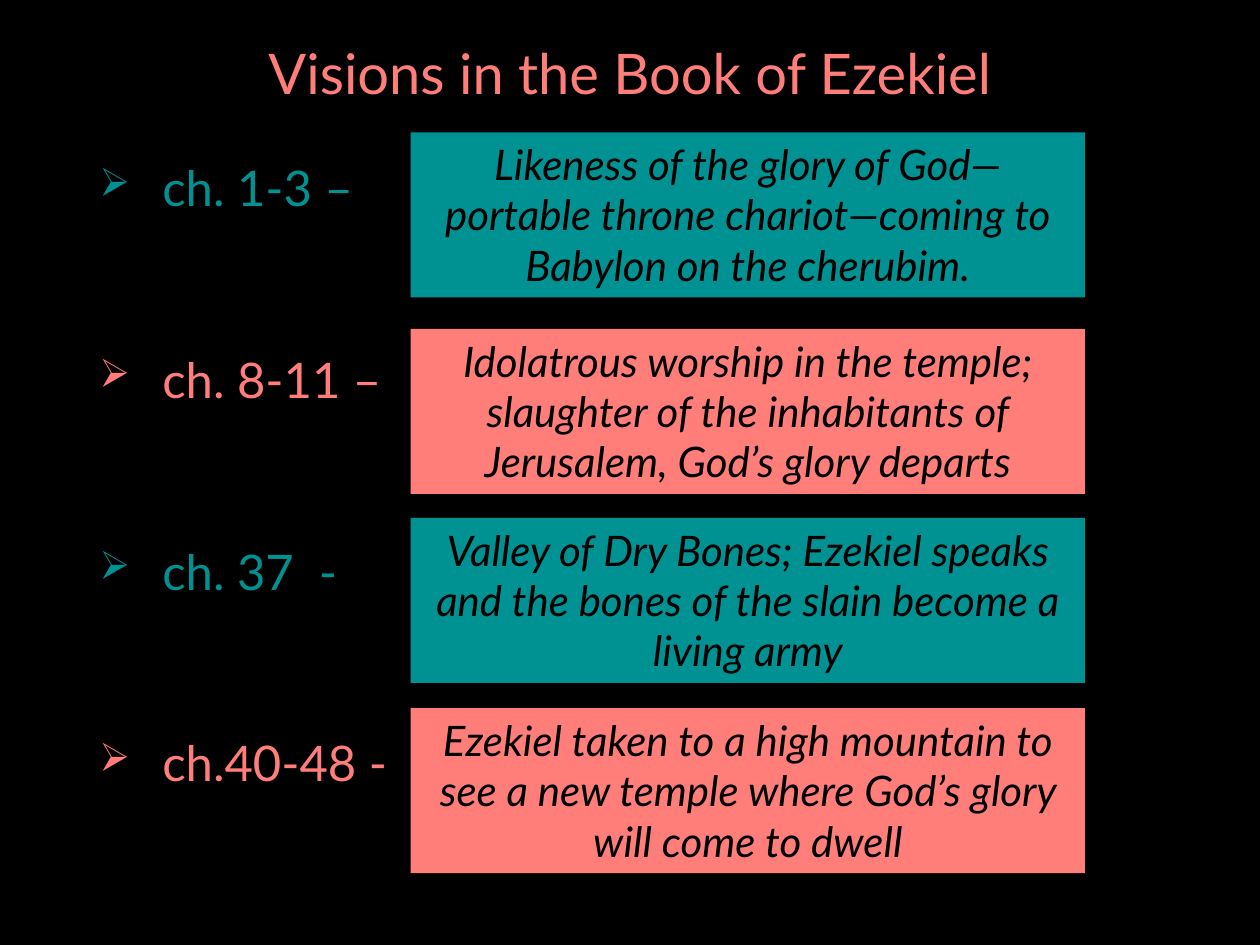
"""Build a slide that pairs chapters of Ezekiel with the visions they hold."""
import dataclasses

import lxml.etree
import pptx
import pptx.dml.color
import pptx.enum.shapes
import pptx.enum.text
import pptx.oxml.ns
import pptx.util


@dataclasses.dataclass(frozen=True)
class Theme:
    font: str = "Lato"
    black: str = "000000"
    teal: str = "009193"
    coral: str = "FF7E79"
    title_size: int = 32
    chapter_size: int = 28
    vision_size: int = 24


class SlideBuilder:
    COLUMNS, ROWS = 100, 75

    def __init__(self, presentation, theme):
        self.theme = theme
        self.column = presentation.slide_width / self.COLUMNS
        self.row = presentation.slide_height / self.ROWS
        self.slide = presentation.slides.add_slide(presentation.slide_layouts[6])
        background = self.slide.background.fill
        background.solid()
        background.fore_color.rgb = self.color(theme.black)

    @staticmethod
    def color(value):
        return pptx.dml.color.RGBColor.from_string(value)

    def place(self, left, top, width, height):
        return (round(left * self.column), round(top * self.row),
                round(width * self.column), round(height * self.row))

    def add_run(self, paragraph, text, size, color, italic=False):
        run = paragraph.add_run()
        run.text = text
        run.font.name = self.theme.font
        run.font.size = pptx.util.Pt(size)
        run.font.color.rgb = self.color(color)
        run.font.italic = italic

    def add_text_box(self, area):
        text_frame = self.slide.shapes.add_textbox(*self.place(*area)).text_frame
        text_frame.word_wrap = True
        return text_frame

    def add_title(self, text, area):
        text_frame = self.add_text_box(area)
        text_frame.vertical_anchor = pptx.enum.text.MSO_ANCHOR.MIDDLE
        paragraph = text_frame.paragraphs[0]
        paragraph.alignment = pptx.enum.text.PP_ALIGN.CENTER
        paragraph.line_spacing = 0.9
        self.add_run(paragraph, text, self.theme.title_size, self.theme.coral)

    def add_bullet(self, paragraph):
        properties = paragraph._p.get_or_add_pPr()
        indent = pptx.util.Inches(0.5)
        properties.set("marL", str(indent))
        properties.set("indent", str(-indent))
        for tag, name, value in (("a:buSzPct", "val", "80000"), ("a:buChar", "char", "➢")):
            lxml.etree.SubElement(properties, pptx.oxml.ns.qn(tag)).set(name, value)

    def add_chapters(self, chapters, area):
        text_frame = self.add_text_box(area)
        for index, (text, color) in enumerate(chapters):
            paragraph = text_frame.add_paragraph() if index else text_frame.paragraphs[0]
            paragraph.space_before = pptx.util.Pt(4)
            paragraph.space_after = pptx.util.Pt(72)
            self.add_bullet(paragraph)
            self.add_run(paragraph, text, self.theme.chapter_size, color)

    def add_vision(self, text, color, area):
        shape = self.slide.shapes.add_shape(
            pptx.enum.shapes.MSO_SHAPE.RECTANGLE, *self.place(*area))
        shape.shadow.inherit = False
        shape.fill.solid()
        shape.fill.fore_color.rgb = self.color(color)
        shape.line.fill.background()
        text_frame = shape.text_frame
        text_frame.word_wrap = True
        text_frame.auto_size = pptx.enum.text.MSO_AUTO_SIZE.SHAPE_TO_FIT_TEXT
        text_frame.vertical_anchor = pptx.enum.text.MSO_ANCHOR.TOP
        paragraph = text_frame.paragraphs[0]
        paragraph.alignment = pptx.enum.text.PP_ALIGN.CENTER
        self.add_run(paragraph, text, self.theme.vision_size, self.theme.black, italic=True)


def main():
    presentation = pptx.Presentation()
    presentation.slide_width = pptx.util.Inches(10)
    presentation.slide_height = pptx.util.Inches(7.5)
    theme = Theme()
    builder = SlideBuilder(presentation, theme)
    visions = [
        ("ch. 1-3 –", theme.teal, 10.5,
         "Likeness of the glory of God—portable throne chariot—coming to Babylon on the cherubim."),
        ("ch. 8-11 –", theme.coral, 26.1,
         "Idolatrous worship in the temple; slaughter of the inhabitants of Jerusalem, "
         "God’s glory departs"),
        ("ch. 37  -", theme.teal, 41.1,
         "Valley of Dry Bones; Ezekiel speaks and the bones of the slain become a living army"),
        ("ch.40-48 -", theme.coral, 56.2,
         "Ezekiel taken to a high mountain to see a new temple where God’s glory "
         "will come to dwell"),
    ]
    builder.add_title("Visions in the Book of Ezekiel", (6.9, 1.6, 86.2, 9))
    builder.add_chapters([(chapter, color) for chapter, color, _, _ in visions],
                         (6.9, 12, 86.2, 61.6))
    for _, color, top, text in visions:
        builder.add_vision(text, color, (32.6, top, 53.5, 13.1))
    presentation.save("out.pptx")


if __name__ == "__main__":
    main()
